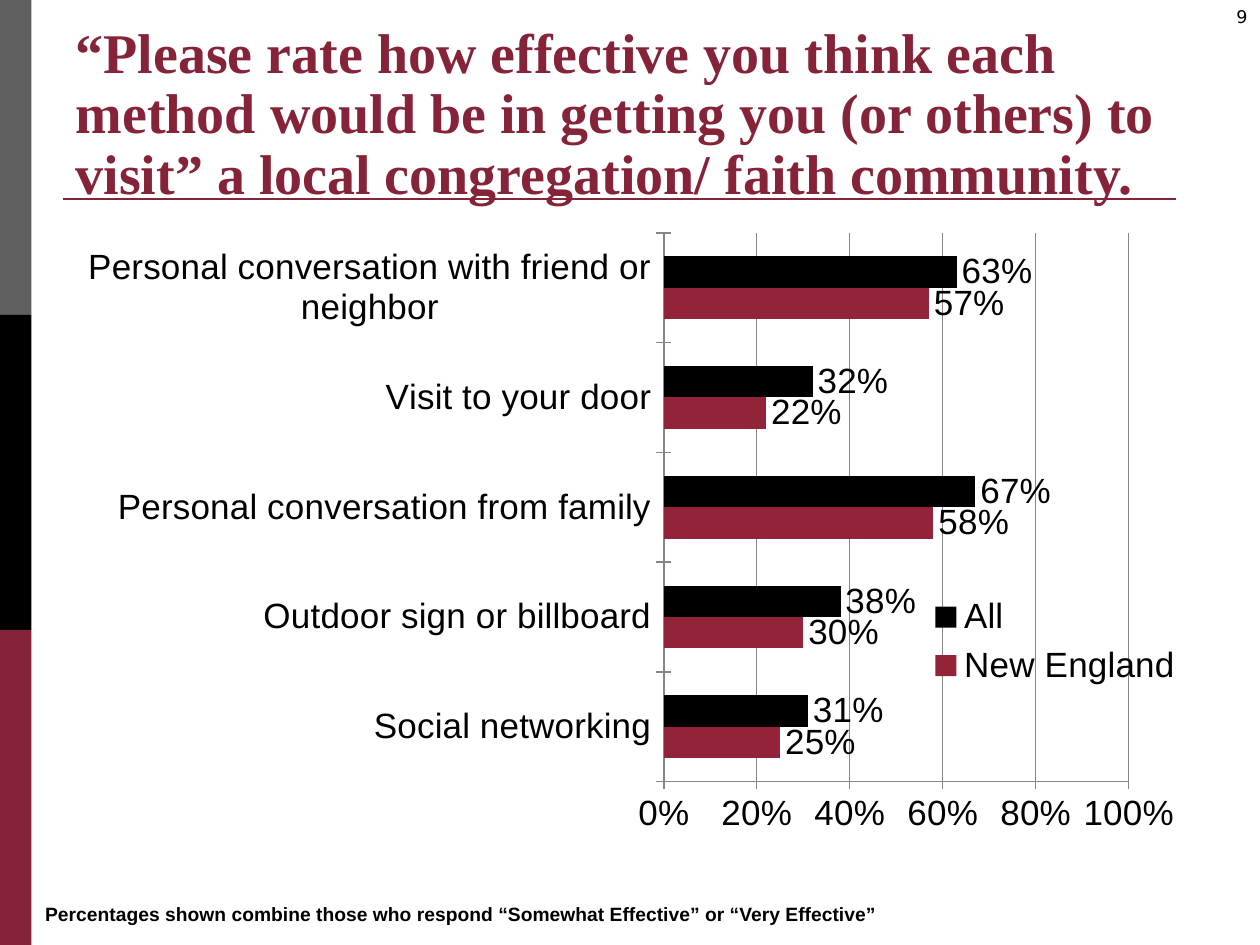
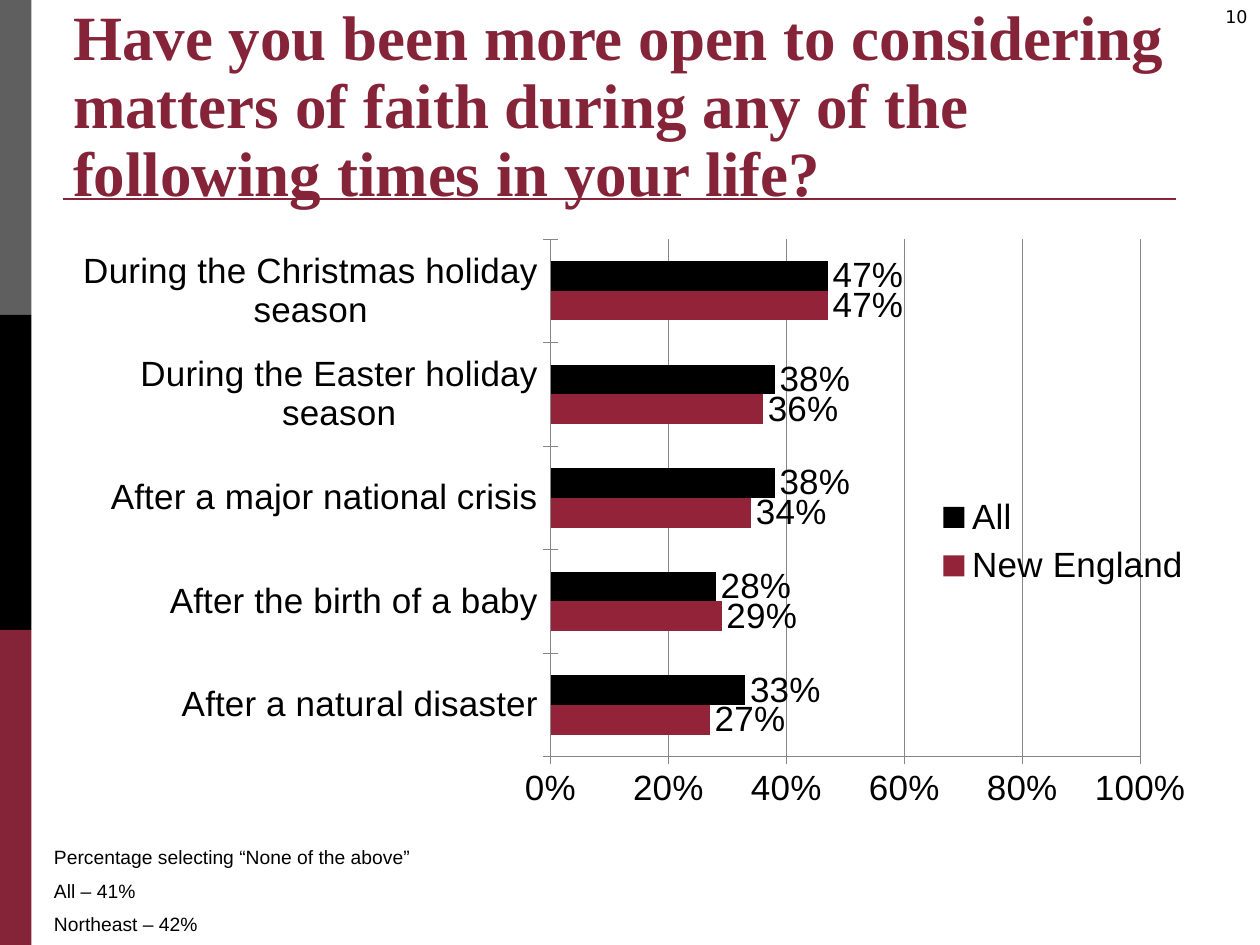
from lxml import etree
from pptx import Presentation
from pptx.chart.data import CategoryChartData
from pptx.dml.color import RGBColor
from pptx.enum.chart import XL_CHART_TYPE, XL_LABEL_POSITION, XL_LEGEND_POSITION, XL_TICK_MARK
from pptx.enum.shapes import MSO_CONNECTOR, MSO_SHAPE
from pptx.enum.text import MSO_ANCHOR, MSO_AUTO_SIZE, PP_ALIGN
from pptx.oxml import parse_xml
from pptx.oxml.ns import nsdecls, qn
from pptx.util import Inches, Pt

COLORS = {"gray": "5F5F5F", "black": "000000", "wine": "852338", "bar": "922339", "grid": "868686"}
SERIF, SANS, SMALL = "Times New Roman", "Arial", "DejaVu Sans"
CHART_BOX = (0.5, 1.75, 9, 4.95)

SLIDES = [
    {
        "title": "“Please rate how effective you think each method would be in getting you "
                 "(or others) to visit” a local congregation/ faith community.",
        "title_box": (0.5, 0.44, 8.92, 1.25),
        "title_size": 32,
        "rows": [
            ("Social networking", 0.25, 0.31),
            ("Outdoor sign or billboard", 0.30, 0.38),
            ("Personal conversation from family", 0.58, 0.67),
            ("Visit to your door", 0.22, 0.32),
            ("Personal conversation with friend or neighbor", 0.57, 0.63),
        ],
        "plot": (0.53, 0.02, 0.41, 0.88),
        "legend": (0.76, 0.59, 0.23, 0.17),
        "note": ["Percentages shown combine those who respond “Somewhat Effective” or “Very Effective”"],
        "note_box": (0.26, 7.11, 7.48, 0.29),
        "note_bold": True,
    },
    {
        "title": "Have you been more open to considering matters of faith during any of the "
                 "following times in your life?",
        "title_box": (0.48, 0.47, 8.97, 1.25),
        "title_size": 36,
        "rows": [
            ("After a natural disaster", 0.27, 0.33),
            ("After the birth of a baby", 0.29, 0.28),
            ("After a major national crisis", 0.34, 0.38),
            ("During the Easter holiday season", 0.36, 0.38),
            ("During the Christmas holiday season", 0.47, 0.47),
        ],
        "plot": (0.43, 0.03, 0.52, 0.83),
        "legend": (0.77, 0.43, 0.23, 0.17),
        "note": ["Percentage selecting “None of the above”", "All – 41%", "Northeast – 42%"],
        "note_box": (0.33, 6.66, 7.48, 0.84),
        "note_bold": False,
    },
]


def rgb(name):
    return RGBColor.from_string(COLORS[name])


def inches(box):
    return [Inches(v) for v in box]


def style(font, face, size, color="black", bold=False):
    font.name, font.size, font.bold = face, Pt(size), bold
    font.color.rgb = rgb(color)


def add_frame(slide, number):
    """Draw the side bands, the title rule and the slide number."""
    height = 2.5
    for i, color in enumerate(("gray", "black", "wine")):
        band = slide.shapes.add_shape(MSO_SHAPE.RECTANGLE, *inches((0, i * height, 0.25, height)))
        band.shadow.inherit = False
        band.fill.solid()
        band.fill.fore_color.rgb = rgb(color)
        band.line.fill.background()
    rule = slide.shapes.add_connector(MSO_CONNECTOR.STRAIGHT, *inches((0.5, 1.58, 9.33, 1.58)))
    rule.line.color.rgb = rgb("wine")
    rule.line.width = Pt(1.5)
    etree.SubElement(rule._element.spPr, qn("a:effectLst"))

    box = slide.shapes.add_textbox(*inches((9.5, 0, 0.5, 0.33)))
    par = box.text_frame.paragraphs[0]
    par.text = str(number)
    par.alignment = PP_ALIGN.RIGHT
    run = par.runs[0]
    style(run.font, SMALL, 10)
    run._r.tag = qn("a:fld")
    run._r.set("id", "{B6F15528-21DE-4FAA-801E-634DDDAF4B2B}")
    run._r.set("type", "slidenum")


def add_title(slide, text, box, size):
    title = slide.shapes.title
    title.left, title.top, title.width, title.height = inches(box)
    frame = title.text_frame
    frame.text = text
    frame.word_wrap = True
    frame.auto_size = MSO_AUTO_SIZE.NONE
    frame.vertical_anchor = MSO_ANCHOR.BOTTOM
    par = frame.paragraphs[0]
    par.alignment = PP_ALIGN.LEFT
    par.line_spacing = 0.9
    style(par.runs[0].font, SERIF, size, "wine", True)


def make_layout(box, inner=False):
    """Return a chart layout element; box holds fractions of the chart."""
    target = '<c:layoutTarget val="inner"/>' if inner else ""
    modes = "".join(f'<c:{k}Mode val="edge"/>' for k in "xy")
    sizes = "".join(f'<c:{k} val="{v}"/>' for k, v in zip("xywh", box))
    return parse_xml(f'<c:layout {nsdecls("c")}><c:manualLayout>{target}{modes}{sizes}'
                     '</c:manualLayout></c:layout>')


def drop_layout(node):
    for old in node.findall(qn("c:layout")):
        node.remove(old)


def add_bars(slide, rows, plot_box, legend_box):
    names, region, everyone = zip(*rows)
    data = CategoryChartData(number_format="0%")
    data.categories = names
    data.add_series("New England", region)
    data.add_series("All", everyone)
    chart = slide.shapes.add_chart(XL_CHART_TYPE.BAR_CLUSTERED, *inches(CHART_BOX), data).chart
    chart.has_title = False
    style(chart.font, SANS, 20)

    plot = chart.plots[0]
    plot.vary_by_categories = False
    plot.gap_width, plot.overlap = 150, 0
    for series, color in zip(plot.series, ("bar", "black")):
        series.format.fill.solid()
        series.format.fill.fore_color.rgb = rgb(color)
        labels = series.data_labels
        labels.show_value = True
        labels.number_format, labels.number_format_is_linked = "0%", False
        labels.position = XL_LABEL_POSITION.OUTSIDE_END

    scale = chart.value_axis
    scale.minimum_scale, scale.maximum_scale, scale.major_unit = 0, 1, 0.2
    scale.has_major_gridlines = True
    scale.tick_labels.number_format = "0%"
    scale.tick_labels.number_format_is_linked = False
    for axis in (scale, chart.category_axis):
        axis.major_tick_mark = XL_TICK_MARK.CROSS
        axis.minor_tick_mark = XL_TICK_MARK.NONE
    for item in (scale, chart.category_axis, scale.major_gridlines):
        item.format.line.color.rgb = rgb("grid")
        item.format.line.width = Pt(0.75)

    chart.has_legend = True
    legend = chart.legend
    legend.position = XL_LEGEND_POSITION.RIGHT
    legend.include_in_layout = True
    key = legend._element
    drop_layout(key)
    key.find(qn("c:legendPos")).addnext(make_layout(legend_box))
    area = chart._chartSpace.chart.plotArea
    drop_layout(area)
    area.insert(0, make_layout(plot_box, inner=True))


def add_note(slide, lines, box, bold):
    frame = slide.shapes.add_textbox(*inches(box)).text_frame
    frame.word_wrap = True
    frame.text = "\n".join(lines)
    for i, par in enumerate(frame.paragraphs):
        if i:
            par.space_before = Pt(6)
        style(par.runs[0].font, SANS, 11, bold=bold)


def add_survey(deck, number, item):
    slide = deck.slides.add_slide(deck.slide_layouts[5])
    add_frame(slide, number)
    add_title(slide, item["title"], item["title_box"], item["title_size"])
    add_bars(slide, item["rows"], item["plot"], item["legend"])
    add_note(slide, item["note"], item["note_box"], item["note_bold"])


def main():
    deck = Presentation()
    deck.slide_width, deck.slide_height = Inches(10), Inches(7.5)
    first = 9
    deck.element.set("firstSlideNum", str(first))
    for number, item in enumerate(SLIDES, first):
        add_survey(deck, number, item)
    deck.save("out.pptx")


if __name__ == "__main__":
    main()
